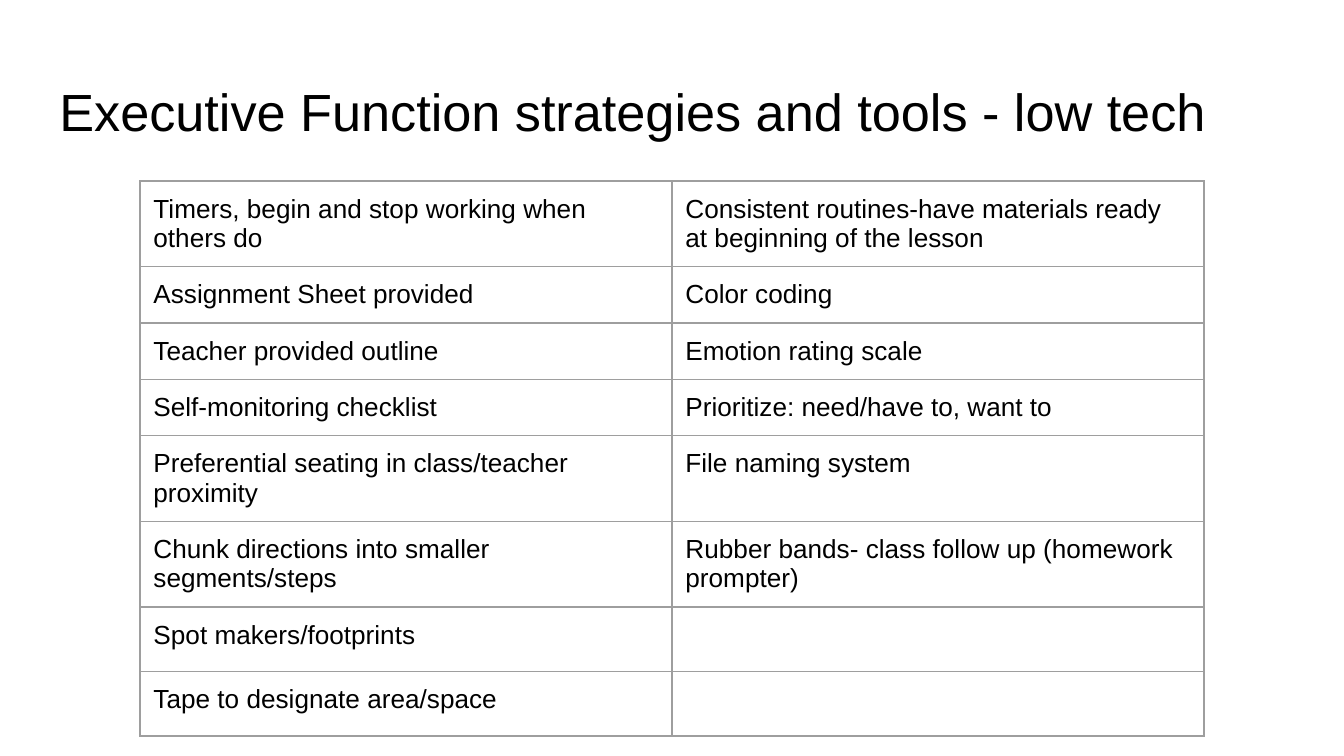
from lxml.etree import SubElement
from pptx import Presentation
from pptx.dml.color import RGBColor
from pptx.enum.text import MSO_ANCHOR, PP_ALIGN
from pptx.oxml.ns import qn
from pptx.util import Emu, Pt

TITLE = "Executive Function strategies and tools - low tech"
ROWS = [
    ("Timers, begin and stop working when others do",
     "Consistent routines-have materials ready at beginning of the lesson"),
    ("Assignment Sheet provided", "Color coding"),
    ("Teacher provided outline", "Emotion rating scale"),
    ("Self-monitoring checklist", "Prioritize: need/have to, want to"),
    ("Preferential seating in class/teacher proximity", "File naming system"),
    ("Chunk directions into smaller segments/steps",
     "Rubber bands- class follow up (homework prompter)"),
    ("Spot makers/footprints", ""),
    ("Tape to designate area/space", ""),
]
INK, GRID = "000000", "9E9E9E"
WIDE, HIGH = 1344, 756
COL, ROW, PAD = 532, 56, Pt(7.2)


def px(n):
    return Emu(round(n * 914400 / 134.4))


def color(code):
    return RGBColor.from_string(code)


def style(para, size):
    para.alignment = PP_ALIGN.LEFT
    font = para.font
    font.name, font.size = "Arial", Pt(size)
    font.color.rgb = color(INK)


def pad(box):
    box.margin_left = box.margin_right = PAD
    box.margin_top = box.margin_bottom = PAD
    box.vertical_anchor = MSO_ANCHOR.TOP


def border(cell):
    props = cell._tc.get_or_add_tcPr()
    # Borders come before the fill in the cell properties
    for i, side in enumerate(("lnL", "lnR", "lnT", "lnB")):
        line = SubElement(props, qn(f"a:{side}"), w=str(Pt(0.75)))
        fill = SubElement(line, qn("a:solidFill"))
        SubElement(fill, qn("a:srgbClr"), val=GRID)
        props.insert(i, line)


deck = Presentation()
deck.slide_width, deck.slide_height = px(WIDE), px(HIGH)
slide = deck.slides.add_slide(deck.slide_layouts[5])

# Title
title = slide.shapes.title
title.left, title.top, title.width, title.height = map(px, (46, 66, 1253, 85))
frame = title.text_frame
frame.text = TITLE
frame.word_wrap = True
pad(frame)
style(frame.paragraphs[0], 28)

# Strategy table
table = slide.shapes.add_table(
    len(ROWS), 2, px(140), px(181), px(2 * COL), px(len(ROWS) * ROW)).table
table.first_row = table.horz_banding = False
for col in table.columns:
    col.width = px(COL)
for r, row in enumerate(ROWS):
    table.rows[r].height = px(ROW)
    for c, text in enumerate(row):
        cell = table.cell(r, c)
        pad(cell)
        cell.fill.background()
        border(cell)
        cell.text = text
        # Empty cells keep the larger default size
        style(cell.text_frame.paragraphs[0], 14 if text else 18)

deck.save("out.pptx")
